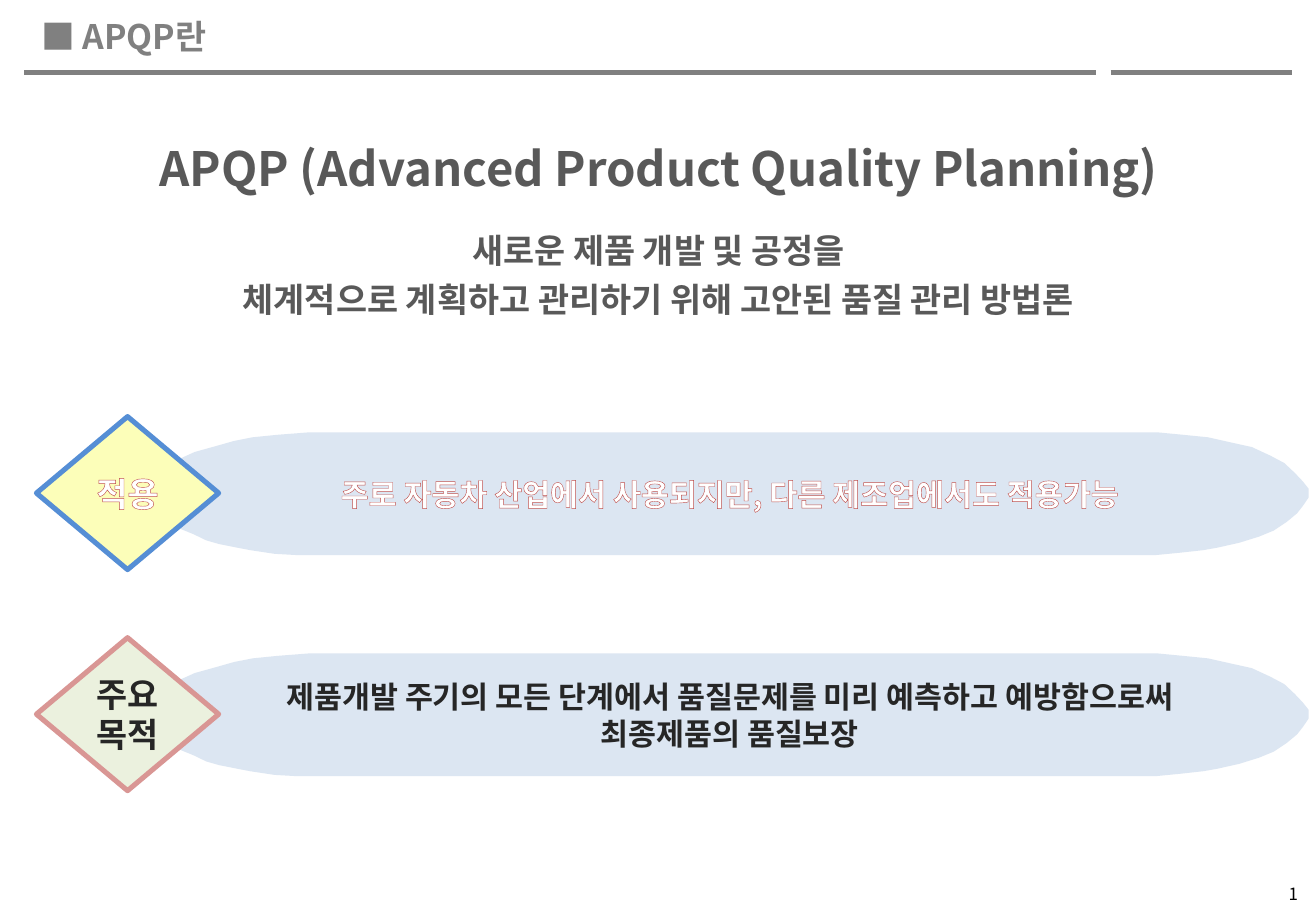
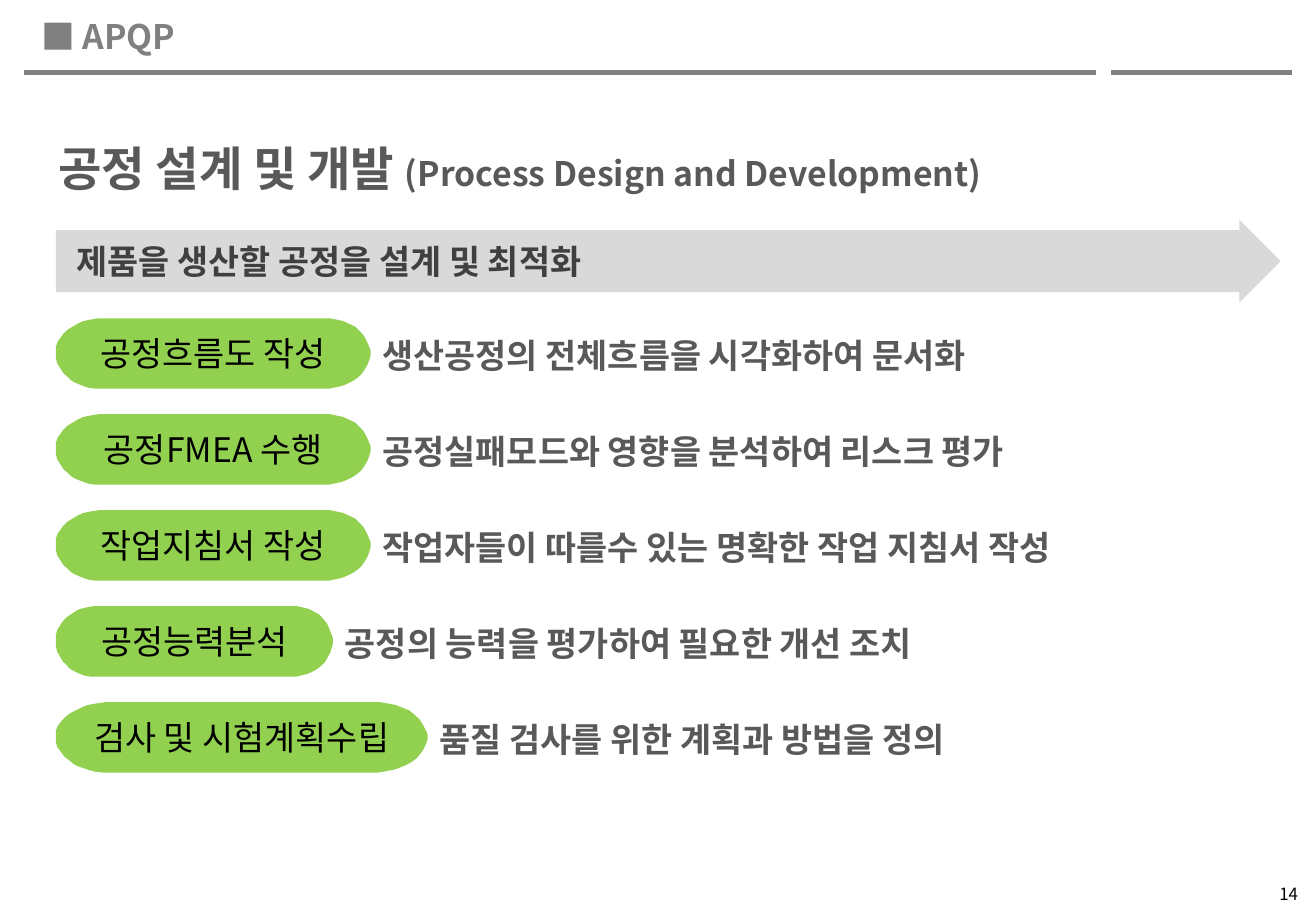
from lxml import etree
from pptx import Presentation
from pptx.dml.color import RGBColor
from pptx.enum.dml import MSO_PATTERN
from pptx.enum.shapes import MSO_CONNECTOR, MSO_SHAPE
from pptx.enum.text import MSO_ANCHOR, PP_ALIGN
from pptx.oxml.ns import qn
from pptx.util import Inches, Pt

LEFT, CENTER, RIGHT = PP_ALIGN.LEFT, PP_ALIGN.CENTER, PP_ALIGN.RIGHT
TOP, MIDDLE = MSO_ANCHOR.TOP, MSO_ANCHOR.MIDDLE
STRAIGHT = MSO_CONNECTOR.STRAIGHT
RECTANGLE, DIAMOND, ARROW = MSO_SHAPE.RECTANGLE, MSO_SHAPE.DIAMOND, MSO_SHAPE.RIGHT_ARROW
DIAGONAL = MSO_PATTERN.DARK_UPWARD_DIAGONAL

KR, JP = "Noto Sans CJK KR", "Noto Sans CJK JP"
GRAY, WHITE, BLACK = "808080", "FFFFFF", "000000"
PALE_BLUE, GREEN, LIGHT_GRAY = "DCE6F2", "92D050", "D9D9D9"
LINE_HEIGHT = 1.2

HEADER = {"size": 20, "bold": True, "name": KR, "color": GRAY}
NUMBER = {"size": 10, "bold": False, "name": KR, "color": BLACK}
TITLE = {"size": 28, "bold": True, "name": JP, "color": "595959", "outline": ("8064A2", 1, 6.5)}
BODY = {**TITLE, "size": 20}
RED_EDGED = {"size": 18, "bold": True, "name": KR, "color": WHITE, "outline": ("C0504D", 0.52, 100)}
DARK = {**RED_EDGED, "color": "262626", "outline": (WHITE, 1.06, 6.5)}
STEP = {"size": 20, "bold": False, "name": KR, "color": BLACK}
GOAL = {"size": 20, "bold": True, "name": KR, "pattern": (GRAY, "404040")}

PILL_PERCENT = [
    (13.6, 0), (87, 0), (89.2, 2), (91.3, 4), (93.2, 8), (95.1, 12), (96.7, 19),
    (97.9, 25), (98.8, 33), (99.5, 40), (100, 46), (100, 53), (99.5, 60), (99, 66),
    (98.1, 73), (97, 80), (95.7, 85), (94, 90), (92.1, 94), (90.9, 96), (89, 98),
    (86.8, 100), (12.6, 100), (10.7, 99), (8.6, 96), (7.5, 94), (5.9, 91), (4.8, 88),
    (3.7, 83), (2.4, 78), (1.4, 71), (0.4, 64), (0, 56), (0, 50), (0, 41), (0.5, 34),
    (1.4, 28), (2.4, 22), (3.8, 16), (5.7, 11), (7.2, 7), (8.8, 4), (10.9, 2),
]

TOPICS = [
    (3.43, "FCFEB9", "558ED5", RED_EDGED, ["적용"],
     ["주로 자동차 산업에서 사용되지만, 다른 제조업에서도 적용가능"]),
    (5.25, "EBF1DE", "D99694", DARK, ["주요", "목적"],
     ["제품개발 주기의 모든 단계에서 품질문제를 미리 예측하고 예방함으로써", "최종제품의 품질보장"]),
]
STEPS = [
    (2.59, "공정흐름도 작성", "생산공정의 전체흐름을 시각화하여 문서화"),
    (2.59, "공정FMEA 수행", "공정실패모드와 영향을 분석하여 리스크 평가"),
    (2.59, "작업지침서 작성", "작업자들이 따를수 있는 명확한 작업 지침서 작성"),
    (2.28, "공정능력분석", "공정의 능력을 평가하여 필요한 개선 조치"),
    (3.06, "검사 및 시험계획수립", "품질 검사를 위한 계획과 방법을 정의"),
]


def rgb(color):
    """Turn a hex string into a colour."""
    return RGBColor.from_string(color)


def add_outline(properties, color, width, opacity):
    """Draw a line around the letters of a run."""
    line = etree.Element(qn("a:ln"), w=str(Pt(width)))
    fill = etree.SubElement(line, qn("a:solidFill"))
    tone = etree.SubElement(fill, qn("a:srgbClr"), val=color)
    if opacity < 100:
        etree.SubElement(tone, qn("a:alpha"), val=str(round(opacity * 1000)))
    properties.insert(0, line)


def style_span(span, style):
    """Apply a text style to a run."""
    font = span.font
    values = {"size": Pt(style["size"]), "bold": style["bold"], "name": style["name"]}
    for name, value in values.items():
        setattr(font, name, value)
    if "pattern" in style:
        front, back = style["pattern"]
        font.fill.patterned()
        font.fill.pattern = DIAGONAL
        font.fill.fore_color.rgb = rgb(front)
        font.fill.back_color.rgb = rgb(back)
    else:
        font.color.rgb = rgb(style["color"])
    properties = span._r.get_or_add_rPr()
    etree.SubElement(properties, qn("a:ea"), typeface=style["name"])
    if "outline" in style:
        add_outline(properties, *style["outline"])


def write(shape, lines, align=LEFT, anchor=MIDDLE, gaps=(), **margins):
    """Fill a shape with lines, each a list of (text, style) spans."""
    frame = shape.text_frame
    for name, value in {"word_wrap": True, "vertical_anchor": anchor, **margins}.items():
        setattr(frame, name, value)
    for index, spans in enumerate(lines):
        para = frame.paragraphs[0] if index == 0 else frame.add_paragraph()
        height = LINE_HEIGHT * max(style["size"] for _, style in spans)
        gap = gaps[index] if gaps else 0
        values = {"alignment": align, "line_spacing": Pt(height), "space_before": Pt(gap)}
        for name, value in values.items():
            setattr(para, name, value)
        for text, style in spans:
            span = para.add_run()
            span.text = text
            style_span(span, style)


def add_text(slide, box, lines, **options):
    """Place a text box."""
    write(slide.shapes.add_textbox(*map(Inches, box)), lines, **options)


def paint(shape, fill, line=None):
    """Give a shape a flat fill and an optional line."""
    shape.shadow.inherit = False
    shape.fill.solid()
    shape.fill.fore_color.rgb = rgb(fill)
    if line:
        shape.line.color.rgb = rgb(line)
        shape.line.width = Pt(3)
    else:
        shape.line.fill.background()


def add_block(slide, kind, box, fill, line=None):
    """Place a preset shape."""
    block = slide.shapes.add_shape(kind, *map(Inches, box))
    paint(block, fill, line)
    return block


def add_pill(slide, box, fill, lines):
    """Place a rounded pill with centred text."""
    left, top, width, height = box
    points = [(Inches(left + width * x / 100), Inches(top + height * y / 100))
              for x, y in PILL_PERCENT]
    builder = slide.shapes.build_freeform(*points[0])
    builder.add_line_segments(points[1:], close=True)
    pill = builder.convert_to_shape()
    paint(pill, fill)
    write(pill, lines, align=CENTER)


def add_frame(deck, heading, number):
    """Start a slide with its heading, rules and page number."""
    slide = deck.slides.add_slide(deck.slide_layouts[6])
    for start, end in ((0.2, 9.02), (9.14, 10.63)):
        rule = slide.shapes.add_connector(
            STRAIGHT, Inches(start), Inches(0.6), Inches(end), Inches(0.6))
        rule.line.color.rgb = rgb(GRAY)
        rule.line.width = Pt(3)
        etree.SubElement(rule._element.spPr, qn("a:effectLst"))
    add_text(slide, (9.83, 7.21, 0.95, 0.3), [[(number, NUMBER)]], align=RIGHT)
    add_text(slide, (0.24, 0.08, 8.17, 0.44), [[(heading, HEADER)]], anchor=TOP)
    return slide


def add_topic(slide, box, fill, line, style, label, lines):
    """Place a diamond label over a wide pill."""
    left, top, width, height = box
    pill = (left + 0.94, top + 0.13, width - 0.94, height - 0.25)
    add_pill(slide, pill, PALE_BLUE, [[(text, style)] for text in lines])
    diamond = add_block(slide, DIAMOND, (left, top, 1.5, height), fill, line)
    write(diamond, [[(text, {**style, "size": 20})] for text in label], align=CENTER,
          margin_left=0, margin_right=0, margin_top=0, margin_bottom=0)


def add_step(slide, box, pill_width, label, text):
    """Place a green pill and its description."""
    left, top, width, height = box
    detail = add_block(slide, RECTANGLE, (left + pill_width, top + 0.03,
                                          width - pill_width, height - 0.03), WHITE)
    write(detail, [[(text, BODY)]])
    add_pill(slide, (left, top, pill_width, height), GREEN, [[(label, STEP)]])


def build_definition(deck):
    """Build the slide that defines APQP."""
    slide = add_frame(deck, "■ APQP란", "1")
    add_text(slide, (0.38, 1.1, 10.08, 1.59), [
        [("APQP (Advanced Product Quality Planning)", TITLE)],
        [("새로운 제품 개발 및 공정을", BODY)],
        [("체계적으로 계획하고 관리하기 위해 고안된 품질 관리 방법론", BODY)],
    ], align=CENTER, anchor=TOP, gaps=(0, 20, 5))
    for top, *topic in TOPICS:
        add_topic(slide, (0.3, top, 10.47, 1.26), *topic)


def build_process(deck):
    """Build the slide on process design and development."""
    slide = add_frame(deck, "■ APQP", "14")
    add_text(slide, (0.38, 1.1, 10.08, 0.57), [
        [("공정 설계 및 개발 ", TITLE), ("(Process Design and Development)", BODY)],
    ], anchor=TOP)
    arrow = add_block(slide, ARROW, (0.46, 1.81, 10.08, 0.68), LIGHT_GRAY)
    arrow.adjustments[0] = 0.75
    arrow.adjustments[1] = 0.5
    write(arrow, [[("제품을 생산할 공정을 설계 및 최적화", GOAL)]], margin_left=Inches(0.17))
    for index, step in enumerate(STEPS):
        add_step(slide, (0.46, 2.62 + 0.79 * index, 9.84, 0.58), *step)


def main():
    """Build and save the deck."""
    deck = Presentation()
    deck.slide_width, deck.slide_height = Inches(10.83), Inches(7.5)
    build_definition(deck)
    build_process(deck)
    deck.save("out.pptx")


if __name__ == "__main__":
    main()
